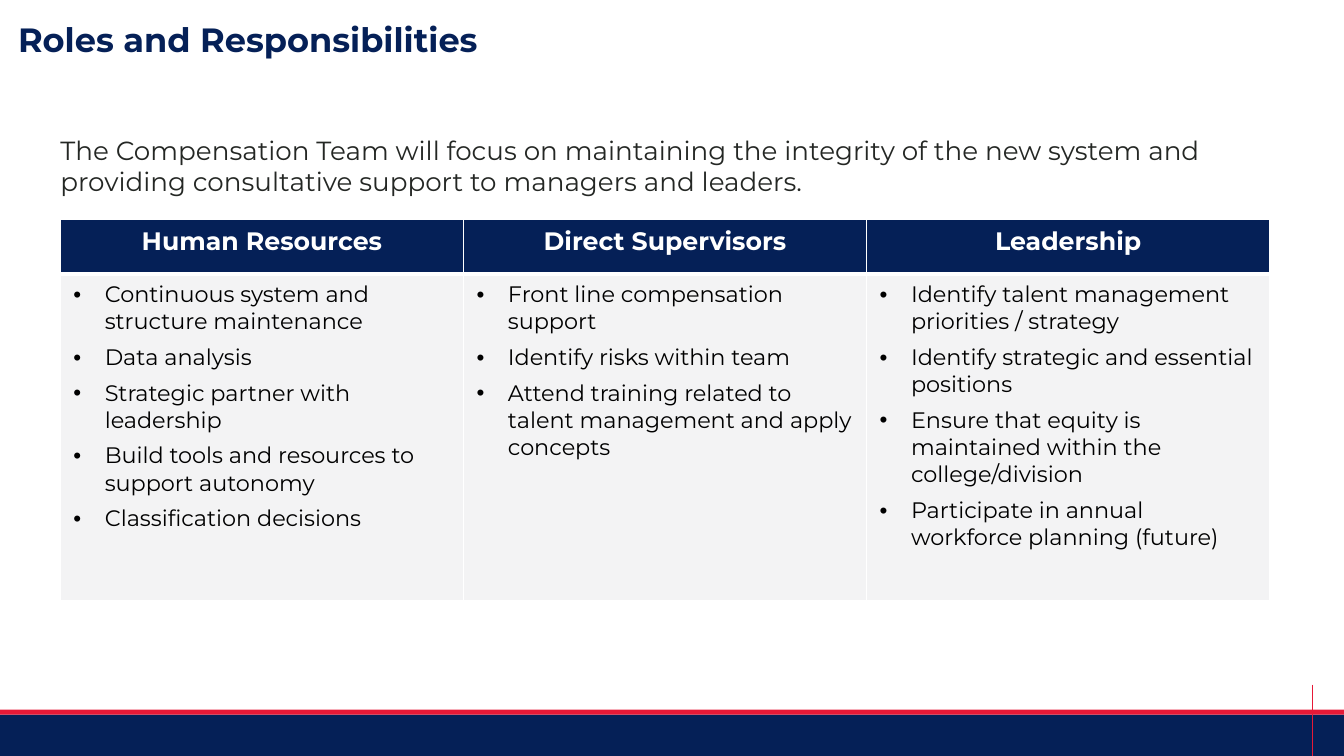
from lxml import etree
from pptx import Presentation
from pptx import util as u
from pptx.dml.color import RGBColor
from pptx.enum import shapes, text
from pptx.oxml.ns import qn
from pptx.util import Cm

FONT = "Montserrat"
COLORS = {"navy": "052057", "red": "E61937", "ink": "242724",
          "black": "000000", "white": "FFFFFF", "gray": "F3F3F4"}
ROLES = {
    "Human Resources": [
        "Continuous system and structure maintenance",
        "Data analysis",
        "Strategic partner with leadership",
        "Build tools and resources to support autonomy",
        "Classification decisions",
    ],
    "Direct Supervisors": [
        "Front line compensation support",
        "Identify risks within team",
        "Attend training related to talent management and apply concepts",
    ],
    "Leadership": [
        "Identify talent management priorities / strategy",
        "Identify strategic and essential positions",
        "Ensure that equity is maintained within the college/division",
        "Participate in annual workforce planning (future)",
    ],
}


def rgb(name):
    return RGBColor.from_string(COLORS[name])


def write(tf, lines, size, color, bold=False, align=text.PP_ALIGN.LEFT,
          before=0, after=0, bullet=False):
    """Fill a text frame with one paragraph per line."""
    for i, line in enumerate(lines):
        p = tf.paragraphs[0] if i == 0 else tf.add_paragraph()
        p.alignment = align
        p.space_before, p.space_after = u.Pt(before), u.Pt(after)
        indent = Cm(0.79) if bullet else 0
        pPr = p._p.get_or_add_pPr()
        pPr.set("marL", str(indent))
        pPr.set("indent", str(-indent))
        if bullet:
            etree.SubElement(pPr, qn("a:buFont"), typeface="Arial")
            etree.SubElement(pPr, qn("a:buChar"), char="•")
        else:
            etree.SubElement(pPr, qn("a:buNone"))
        r = p.add_run()
        r.text = line
        r.font.name, r.font.size, r.font.bold = FONT, u.Pt(size), bold
        r.font.color.rgb = rgb(color)


def place(sp, left, top, width, height):
    sp.left, sp.top, sp.width, sp.height = left, top, width, height


def add_bar(slide, left, top, width, height, color):
    sp = slide.shapes.add_shape(shapes.MSO_SHAPE.RECTANGLE, left, top, width, height)
    sp.shadow.inherit = False
    sp.fill.solid()
    sp.fill.fore_color.rgb = rgb(color)
    sp.line.fill.background()


def add_footer(slide, left, top, width, height):
    """Navy band under a red stripe, crossed by a thin vertical rule."""
    stripe = Cm(0.13)
    add_bar(slide, left, top + stripe, width, height - stripe, "navy")
    x = left + width - Cm(0.8)
    rule = slide.shapes.add_connector(shapes.MSO_CONNECTOR.STRAIGHT,
                                      x, top - Cm(0.63), x, top + height)
    rule.line.color.rgb = rgb("red")
    rule.line.width = u.Pt(0.5)
    etree.SubElement(rule._element.spPr, qn("a:effectLst"))
    add_bar(slide, left, top, width, stripe, "red")


def add_title(slide, left, top, width, height):
    title = slide.shapes.title
    place(title, left, top, width, height)
    tf = title.text_frame
    tf.word_wrap = False
    tf.auto_size = text.MSO_AUTO_SIZE.NONE
    tf.vertical_anchor = text.MSO_ANCHOR.TOP
    write(tf, ["Roles and Responsibilities"], 24, "navy", bold=True)


def add_intro(slide, left, top, width, height):
    body = slide.placeholders[1]
    place(body, left, top, width, height)
    tf = body.text_frame
    tf.word_wrap = True
    tf.auto_size = text.MSO_AUTO_SIZE.NONE
    tf.margin_left = tf.margin_top = tf.margin_right = tf.margin_bottom = 0
    write(tf, ["The Compensation Team will focus on maintaining the integrity of the "
               "new system and providing consultative support to managers and leaders."],
          18.7, "ink", before=13.3)


def format_cell(cell, fill, **borders):
    """Set margins, fill and white borders; borders maps lnL, lnR, lnT, lnB to points."""
    cell.margin_left = cell.margin_right = Cm(0.33)
    cell.margin_top = cell.margin_bottom = Cm(0.17)
    cell.vertical_anchor = text.MSO_ANCHOR.TOP
    tcPr = cell._tc.get_or_add_tcPr()
    for side, points in borders.items():
        ln = etree.SubElement(tcPr, qn(f"a:{side}"), w=str(u.Pt(points)))
        solid = etree.SubElement(ln, qn("a:solidFill"))
        etree.SubElement(solid, qn("a:srgbClr"), val=COLORS["white"])
    cell.fill.solid()
    cell.fill.fore_color.rgb = rgb(fill)


def add_roles_table(slide, left, top, width, height):
    header = Cm(1.37)
    table = slide.shapes.add_table(2, len(ROLES), left, top, width, height).table
    table.rows[0].height, table.rows[1].height = header, height - header
    for col, (role, duties) in enumerate(ROLES.items()):
        table.columns[col].width = width // len(ROLES)
        head, duty_cell = table.cell(0, col), table.cell(1, col)
        format_cell(head, "navy", lnL=1, lnR=1, lnT=1, lnB=3)
        write(head.text_frame, [role], 18, "white", bold=True,
              align=text.PP_ALIGN.CENTER)
        format_cell(duty_cell, "gray", lnL=1, lnR=1, lnT=3, lnB=1)
        write(duty_cell.text_frame, duties, 16, "black", after=6, bullet=True)


def main():
    prs = Presentation()
    prs.slide_width, prs.slide_height = Cm(33.87), Cm(19.05)
    slide = prs.slides.add_slide(prs.slide_layouts[1])
    margin, content = Cm(1.52), Cm(30.48)
    add_footer(slide, 0, Cm(17.88), prs.slide_width, Cm(1.25))
    add_title(slide, Cm(0.2), Cm(0.36), Cm(12.22), Cm(1.27))
    add_intro(slide, margin, Cm(3.38), content, Cm(1.63))
    add_roles_table(slide, margin, Cm(5.54), content, Cm(9.6))
    prs.save("out.pptx")


if __name__ == "__main__":
    main()
